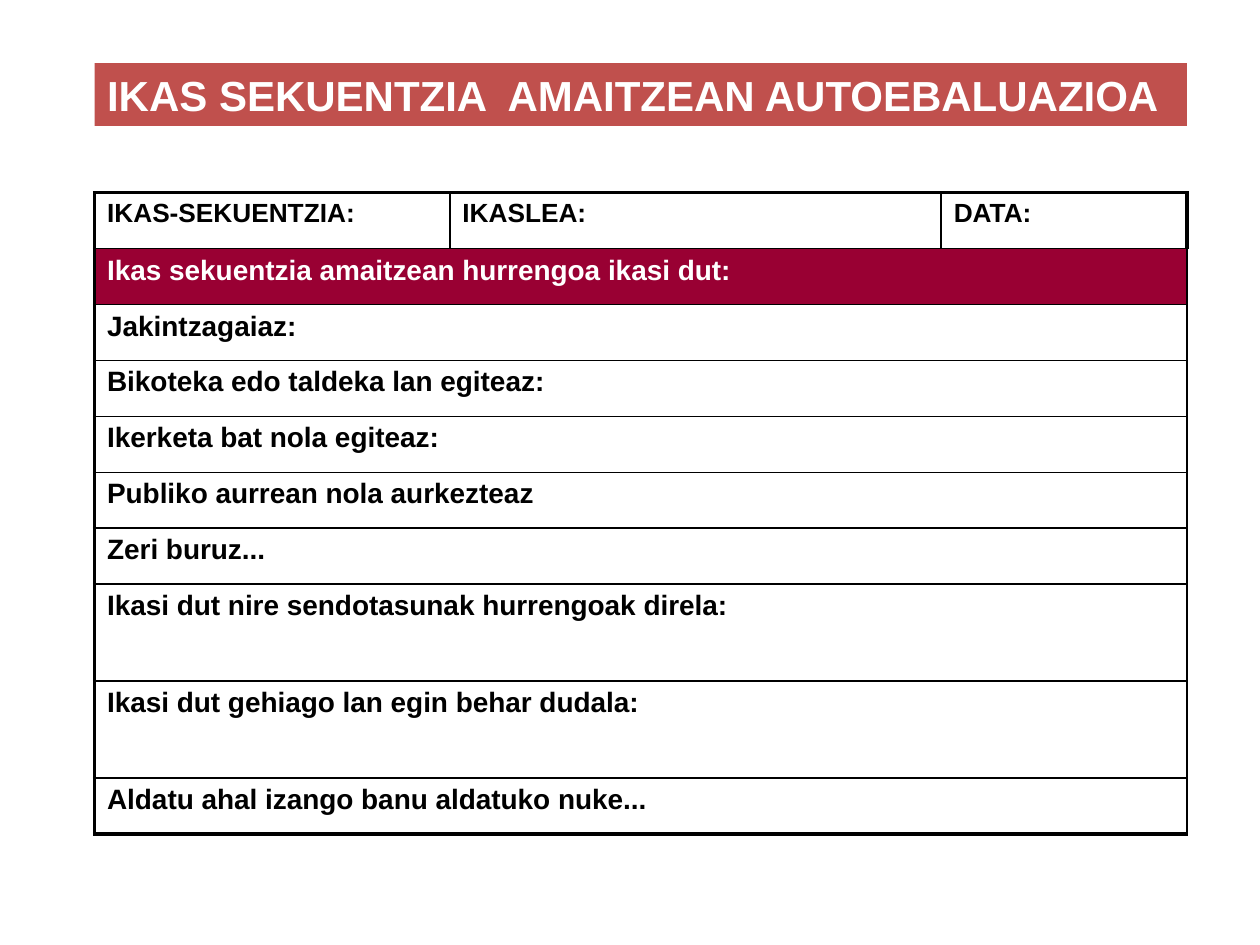
from dataclasses import dataclass
from lxml.etree import SubElement as Sub
from pptx import Presentation
from pptx.dml.color import RGBColor as RGB
from pptx.enum.text import MSO_ANCHOR as Anchor, MSO_AUTO_SIZE as Fit, PP_ALIGN as Align
from pptx.oxml.ns import qn
from pptx.util import Inches, Pt


@dataclass(frozen=True)
class Theme:
    """Colours, font and sizes of the slide."""
    font: str = "Arial"
    ink: str = "000000"
    light: str = "FFFFFF"
    band: str = "C0504D"
    wine: str = "990033"
    title: int = 24
    head: int = 15
    body: int = 16
    thin: float = 1
    thick: float = 2.25


THEME = Theme()
TITLE = "IKAS SEKUENTZIA  AMAITZEAN AUTOEBALUAZIOA"
HEADS = ["IKAS-SEKUENTZIA:", "IKASLEA:", "DATA:"]
LINES = [
    "Ikas sekuentzia amaitzean hurrengoa ikasi dut:",
    "Jakintzagaiaz:",
    "Bikoteka edo taldeka lan egiteaz:",
    "Ikerketa bat nola egiteaz:",
    "Publiko aurrean nola aurkezteaz",
    "Zeri buruz...",
    "Ikasi dut nire sendotasunak hurrengoak direla:",
    "Ikasi dut gehiago lan egin behar dudala:",
    "Aldatu ahal izango banu aldatuko nuke...",
]
WIDTHS = [2.82, 3.9, 1.95]
TALL = {7: 0.77, 8: 0.77}


def write(frame, text, size, color):
    """Put bold text in a frame."""
    frame.text = text
    para = frame.paragraphs[0]
    para.alignment = Align.LEFT
    font = para.runs[0].font
    font.name, font.size, font.bold = THEME.font, Pt(size), True
    font.color.rgb = RGB.from_string(color)


def edge(cell, sides):
    """Draw the four borders of a cell, thick where sides says so."""
    props = cell._tc.get_or_add_tcPr()
    for side in "LRTB":
        width = THEME.thick if side in sides else THEME.thin
        line = Sub(props, qn(f"a:ln{side}"), w=str(Pt(width)))
        fill = Sub(line, qn("a:solidFill"))
        Sub(fill, qn("a:srgbClr"), val=THEME.ink)


def add_title(slide, left, top, width, height):
    """Place the title on its coloured band."""
    shape = slide.shapes.title
    shape.left, shape.top, shape.width, shape.height = left, top, width, height
    shape.fill.solid()
    shape.fill.fore_color.rgb = RGB.from_string(THEME.band)
    frame = shape.text_frame
    frame.auto_size, frame.word_wrap = Fit.NONE, True
    frame.vertical_anchor = Anchor.TOP
    write(frame, TITLE, THEME.title, THEME.light)


def add_form(slide, left, top, width, height):
    """Place the form: a row of heads, then one full-width row for each line."""
    rows, cols = len(LINES) + 1, len(HEADS)
    table = slide.shapes.add_table(rows, cols, left, top, width, height).table
    table.first_row = table.horz_banding = False
    for col, size in zip(table.columns, WIDTHS):
        col.width = Inches(size)
    rest = height - sum(Inches(size) for size in TALL.values())
    for i, row in enumerate(table.rows):
        row.height = Inches(TALL[i]) if i in TALL else rest // (rows - len(TALL))
        for j, cell in enumerate(row.cells):
            ends = {"L": j == 0, "R": j == cols - 1, "T": i == 0, "B": i == rows - 1}
            edge(cell, [side for side, outer in ends.items() if outer])
            cell.fill.background()
    for j, text in enumerate(HEADS):
        write(table.cell(0, j).text_frame, text, THEME.head, THEME.ink)
    for i, text in enumerate(LINES, 1):
        cell = table.cell(i, 0)
        cell.merge(table.cell(i, cols - 1))
        write(cell.text_frame, text, THEME.body, THEME.light if i == 1 else THEME.ink)
    for cell in table.rows[1].cells:
        cell.fill.solid()
        cell.fill.fore_color.rgb = RGB.from_string(THEME.wine)


def main():
    """Build the slide and save it."""
    deck = Presentation()
    deck.slide_width, deck.slide_height = Inches(10), Inches(7.5)
    slide = deck.slides.add_slide(deck.slide_layouts.get_by_name("Title Only"))
    left, width = Inches(0.75), Inches(sum(WIDTHS))
    add_title(slide, left, Inches(0.5), width, Inches(0.5))
    add_form(slide, left, Inches(1.53), width, Inches(5.09))
    deck.save("out.pptx")


if __name__ == "__main__":
    main()
